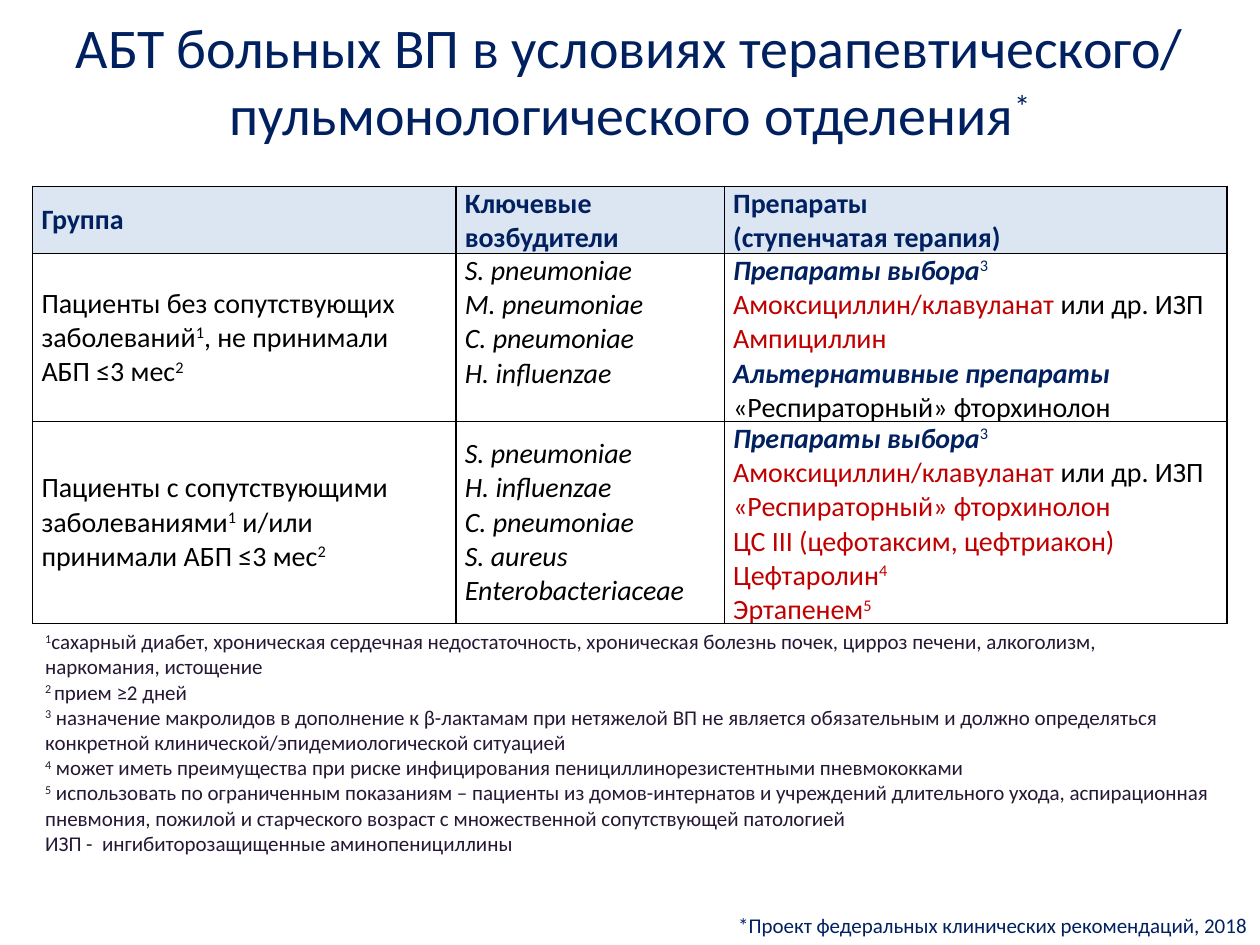
from lxml import etree
from pptx import Presentation
from pptx.dml.color import RGBColor
from pptx.enum.text import MSO_ANCHOR, PP_ALIGN
from pptx.oxml.ns import qn
from pptx.util import Inches, Pt

LEFT, CENTER, RIGHT, JUSTIFY = PP_ALIGN.LEFT, PP_ALIGN.CENTER, PP_ALIGN.RIGHT, PP_ALIGN.JUSTIFY
TOP, MIDDLE = MSO_ANCHOR.TOP, MSO_ANCHOR.MIDDLE
FONT = "Calibri"
NAVY, RED, BLACK, NOTE, HEADER_FILL = "002060", "C00000", "000000", "261835", "DCE6F2"

STYLES = {
    "navy": dict(color=NAVY),
    "navy_sup": dict(color=NAVY, sup=True),
    "head": dict(color=NAVY, bold=True),
    "choice": dict(color=NAVY, bold=True, italic=True),
    "choice_sup": dict(color=NAVY, sup=True),
    "plain": dict(color=BLACK),
    "sup": dict(color=BLACK, sup=True),
    "species": dict(color=BLACK, italic=True),
    "red": dict(color=RED),
    "red_sup": dict(color=RED, sup=True),
    "note": dict(color=NOTE),
    "note_sup": dict(color=NOTE, sup=True),
}

COLUMNS = [3.36, 2.13, 3.99]
ROWS = [0.53, 1.33, 1.6]

CHOICE = [("Препараты выбора", "choice"), ("3\n", "choice_sup"),
          ("Амоксициллин/клавуланат", "red"), (" или др. ИЗП", "plain")]


def species(*names):
    return [[(name, "species")] for name in names]


CELLS = [
    [
        (MIDDLE, LEFT, [[("Группа", "head")]]),
        (TOP, LEFT, [[("Ключевые возбудители", "head")]]),
        (TOP, LEFT, [[("Препараты \n(ступенчатая терапия)", "head")]]),
    ],
    [
        (MIDDLE, LEFT, [[("Пациенты без сопутствующих заболеваний", "plain"), ("1", "sup"),
                         (", не принимали\nАБП ≤3 мес", "plain"), ("2", "sup")]]),
        (TOP, JUSTIFY, species("S. pneumoniae", "M. pneumoniae", "C. pneumoniae",
                               "H. influenzae")),
        (TOP, LEFT, [CHOICE,
                     [("Ампициллин", "red")],
                     [("Альтернативные препараты\n", "choice"),
                      ("«Респираторный» фторхинолон", "plain")]]),
    ],
    [
        (MIDDLE, LEFT, [[("Пациенты с сопутствующими заболеваниями", "plain"), ("1", "sup"),
                         (" и/или принимали АБП ≤3 мес", "plain"), ("2", "sup")]]),
        (MIDDLE, LEFT, species("S. pneumoniae", "H. influenzae", "C. pneumoniae",
                               "S. aureus", "Enterobacteriaceae")),
        (TOP, LEFT, [CHOICE,
                     [("«Респираторный» фторхинолон", "red")],
                     [("ЦС III (цефотаксим, цефтриакон)", "red")],
                     [("Цефтаролин", "red"), ("4", "red_sup")],
                     [("Эртапенем", "red"), ("5", "red_sup")]]),
    ],
]

TITLE = [[("АБТ больных ВП в условиях терапевтического/ пульмонологического отделения", "navy"),
          ("*", "navy_sup")]]
FOOTNOTES = [
    [("1", "note_sup"),
     ("сахарный диабет, хроническая сердечная недостаточность, хроническая болезнь почек, "
      "цирроз печени, алкоголизм, наркомания, истощение", "note")],
    [("2 ", "note_sup"), ("прием ≥2 дней", "note")],
    [("3", "note_sup"),
     (" назначение макролидов в дополнение к β-лактамам при нетяжелой ВП не является "
      "обязательным и должно определяться конкретной клинической/эпидемиологической "
      "ситуацией", "note")],
    [("4", "note_sup"),
     (" может иметь преимущества при риске инфицирования пенициллинорезистентными "
      "пневмококками", "note")],
    [("5", "note_sup"),
     (" использовать по ограниченным показаниям – пациенты из домов-интернатов и учреждений "
      "длительного ухода, аспирационная пневмония, пожилой и старческого возраст с "
      "множественной сопутствующей патологией", "note")],
    [("ИЗП -  ингибиторозащищенные аминопенициллины", "note")],
]
SOURCE = [[("*Проект федеральных клинических рекомендаций, 2018", "navy")]]


def rgb(value):
    return RGBColor.from_string(value)


def add_run(p, text, size, color, bold=False, italic=False, sup=False):
    for i, line in enumerate(text.split("\n")):
        if i:
            p.add_line_break()
        if line:
            r = p.add_run()
            r.text = line
            r.font.name, r.font.size = FONT, Pt(size)
            r.font.bold, r.font.italic = bold, italic
            r.font.color.rgb = rgb(color)
            if sup:
                r._r.get_or_add_rPr().set("baseline", "30000")


def write(tf, paragraphs, size, align):
    for i, runs in enumerate(paragraphs):
        p = tf.add_paragraph() if i else tf.paragraphs[0]
        p.alignment = align
        for text, style in runs:
            add_run(p, text, size, **STYLES[style])


def add_text(s, left, top, width, height, paragraphs, size, align=LEFT, wrap=True):
    box = s.shapes.add_textbox(Inches(left), Inches(top), Inches(width), Inches(height))
    box.text_frame.word_wrap = wrap
    write(box.text_frame, paragraphs, size, align)


def set_borders(cell, color, width):
    tcPr = cell._tc.get_or_add_tcPr()
    for i, side in enumerate(("lnL", "lnR", "lnT", "lnB")):
        ln = etree.Element(qn(f"a:{side}"), w=str(Pt(width)))
        fill = etree.SubElement(ln, qn("a:solidFill"))
        etree.SubElement(fill, qn("a:srgbClr"), val=color)
        tcPr.insert(i, ln)


def fill_cell(cell, anchor, align, paragraphs, fill):
    cell.margin_left = cell.margin_right = Inches(0.07)
    cell.margin_top = cell.margin_bottom = 0
    cell.vertical_anchor = anchor
    if fill:
        cell.fill.solid()
        cell.fill.fore_color.rgb = rgb(fill)
    else:
        cell.fill.background()
    set_borders(cell, BLACK, 1)
    write(cell.text_frame, paragraphs, 16, align)


def add_therapy_table(s, left, top):
    frame = s.shapes.add_table(len(ROWS), len(COLUMNS), Inches(left), Inches(top),
                               Inches(sum(COLUMNS)), Inches(sum(ROWS)))
    table = frame.table
    table.horz_banding = False
    for column, width in zip(table.columns, COLUMNS):
        column.width = Inches(width)
    for i, (row, height) in enumerate(zip(table.rows, ROWS)):
        row.height = Inches(height)
        for cell, content in zip(row.cells, CELLS[i]):
            fill_cell(cell, *content, fill=None if i else HEADER_FILL)


def main():
    prs = Presentation()
    prs.slide_width, prs.slide_height = Inches(10), Inches(7.5)
    s = prs.slides.add_slide(prs.slide_layouts[6])
    add_text(s, 0, 0.05, 10, 1.18, TITLE, 32, CENTER)
    add_therapy_table(s, 0.26, 1.48)
    add_text(s, 0.26, 4.94, 9.48, 2.19, FOOTNOTES, 12)
    add_text(s, 5.7, 7.19, 4.3, 0.3, SOURCE, 12, RIGHT, wrap=False)
    prs.save("out.pptx")


if __name__ == "__main__":
    main()
